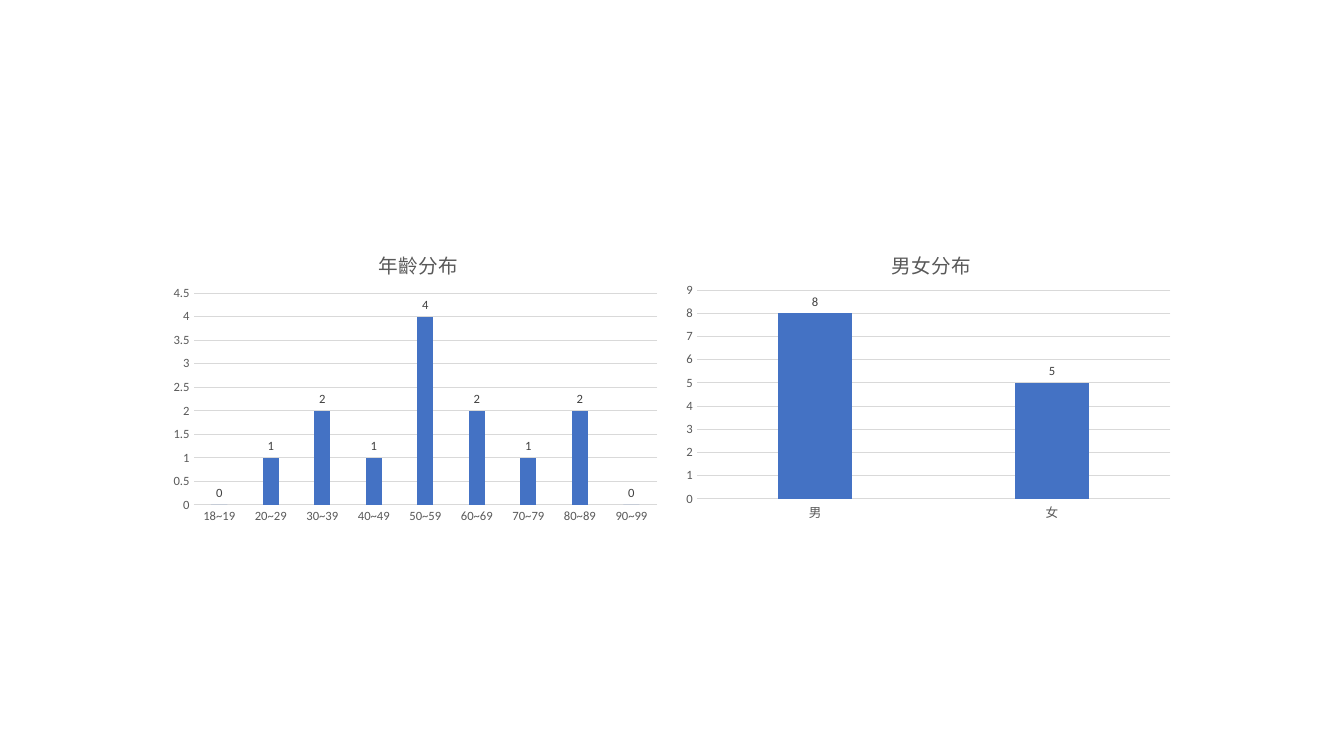
from dataclasses import dataclass
from lxml.etree import SubElement
from pptx import Presentation
from pptx.chart.chart import Chart
from pptx.chart.data import CategoryChartData
from pptx.dml.color import RGBColor
from pptx.enum.chart import XL_CHART_TYPE, XL_LABEL_POSITION, XL_TICK_MARK
from pptx.oxml.ns import qn
from pptx.slide import Slide
from pptx.text.text import Font
from pptx.util import Inches, Pt


@dataclass(frozen=True)
class Theme:
    face: str = "Calibri"
    bar: str = "4472C4"
    text: str = "595959"
    label: str = "404040"
    rule: str = "D9D9D9"
    head: float = 14
    small: float = 9
    line: float = 0.75


@dataclass(frozen=True)
class Panel:
    title: str
    left: float
    cats: list[str]
    vals: list[int]
    top: float
    step: float
    plot: tuple[float, float, float, float]


THEME = Theme()
WIDE, HIGH = Inches(13.33), Inches(7.5)

# Panel places are percent of the slide; plot areas are shares of the chart
ROW, SPAN, TALL = 30, 37.5, 40
HEAD = (0.42, 0.06)
AGES = ["18~19"] + [f"{n}~{n + 9}" for n in range(20, 100, 10)]
PANELS = [
    Panel("年齡分布", 12.15, AGES, [0, 1, 2, 1, 4, 2, 1, 2, 0],
          4.5, 0.5, (0.06, 0.22, 0.92, 0.7)),
    Panel("男女分布", 50.34, ["男", "女"], [8, 5],
          9, 1, (0.04, 0.21, 0.94, 0.69)),
]


def style(font: Font, size: float, color: str) -> None:
    font.name = THEME.face
    font.size = Pt(size)
    font.bold = False
    font.color.rgb = RGBColor.from_string(color)


def place(owner, index: int, box: tuple[float, ...], inner: bool = False) -> None:
    """Give a chart part a manual layout."""
    for old in owner.findall(qn("c:layout")):
        owner.remove(old)
    layout = SubElement(owner, qn("c:layout"))
    owner.insert(index, layout)
    manual = SubElement(layout, qn("c:manualLayout"))
    if inner:
        SubElement(manual, qn("c:layoutTarget")).set("val", "inner")
    for key in ("xMode", "yMode"):
        SubElement(manual, qn(f"c:{key}")).set("val", "edge")
    for key, share in zip("xywh", box):
        SubElement(manual, qn(f"c:{key}")).set("val", str(share))


def add_title(chart: Chart, text: str) -> None:
    chart.has_title = True
    title = chart.chart_title
    title.text_frame.text = text
    style(title.text_frame.paragraphs[0].runs[0].font, THEME.head, THEME.text)
    place(title.element, 1, HEAD)


def set_axes(chart: Chart, panel: Panel) -> None:
    rule = RGBColor.from_string(THEME.rule)
    for axis in (chart.category_axis, chart.value_axis):
        axis.major_tick_mark = axis.minor_tick_mark = XL_TICK_MARK.NONE
        style(axis.tick_labels.font, THEME.small, THEME.text)
    scale = chart.value_axis
    scale.minimum_scale, scale.maximum_scale = 0, panel.top
    scale.major_unit = panel.step
    scale.format.line.fill.background()
    scale.has_major_gridlines = True
    for line in (scale.major_gridlines.format.line,
                 chart.category_axis.format.line):
        line.color.rgb = rule
        line.width = Pt(THEME.line)


def set_bars(chart: Chart) -> None:
    plot = chart.plots[0]
    plot.gap_width, plot.overlap = 219, -27
    plot.vary_by_categories = False
    fill = plot.series[0].format.fill
    fill.solid()
    fill.fore_color.rgb = RGBColor.from_string(THEME.bar)
    labels = plot.series[0].data_labels
    labels.show_value = True
    labels.position = XL_LABEL_POSITION.OUTSIDE_END
    style(labels.font, THEME.small, THEME.label)


def add_panel(slide: Slide, panel: Panel) -> None:
    data = CategoryChartData()
    data.categories = panel.cats
    data.add_series("Series 1", panel.vals)
    chart = slide.shapes.add_chart(
        XL_CHART_TYPE.COLUMN_CLUSTERED,
        int(WIDE * panel.left / 100), int(HIGH * ROW / 100),
        int(WIDE * SPAN / 100), int(HIGH * TALL / 100), data).chart
    chart.has_legend = False
    chart.font.name, chart.font.size = THEME.face, Pt(10)
    add_title(chart, panel.title)
    set_axes(chart, panel)
    set_bars(chart)
    area = chart.element.find(f".//{qn('c:plotArea')}")
    place(area, 0, panel.plot, inner=True)


def main() -> None:
    deck = Presentation()
    deck.slide_width, deck.slide_height = WIDE, HIGH
    # Blank layout: the slide holds only the two charts
    slide = deck.slides.add_slide(deck.slide_layouts[6])
    for panel in PANELS:
        add_panel(slide, panel)
    deck.save("out.pptx")


if __name__ == "__main__":
    main()
